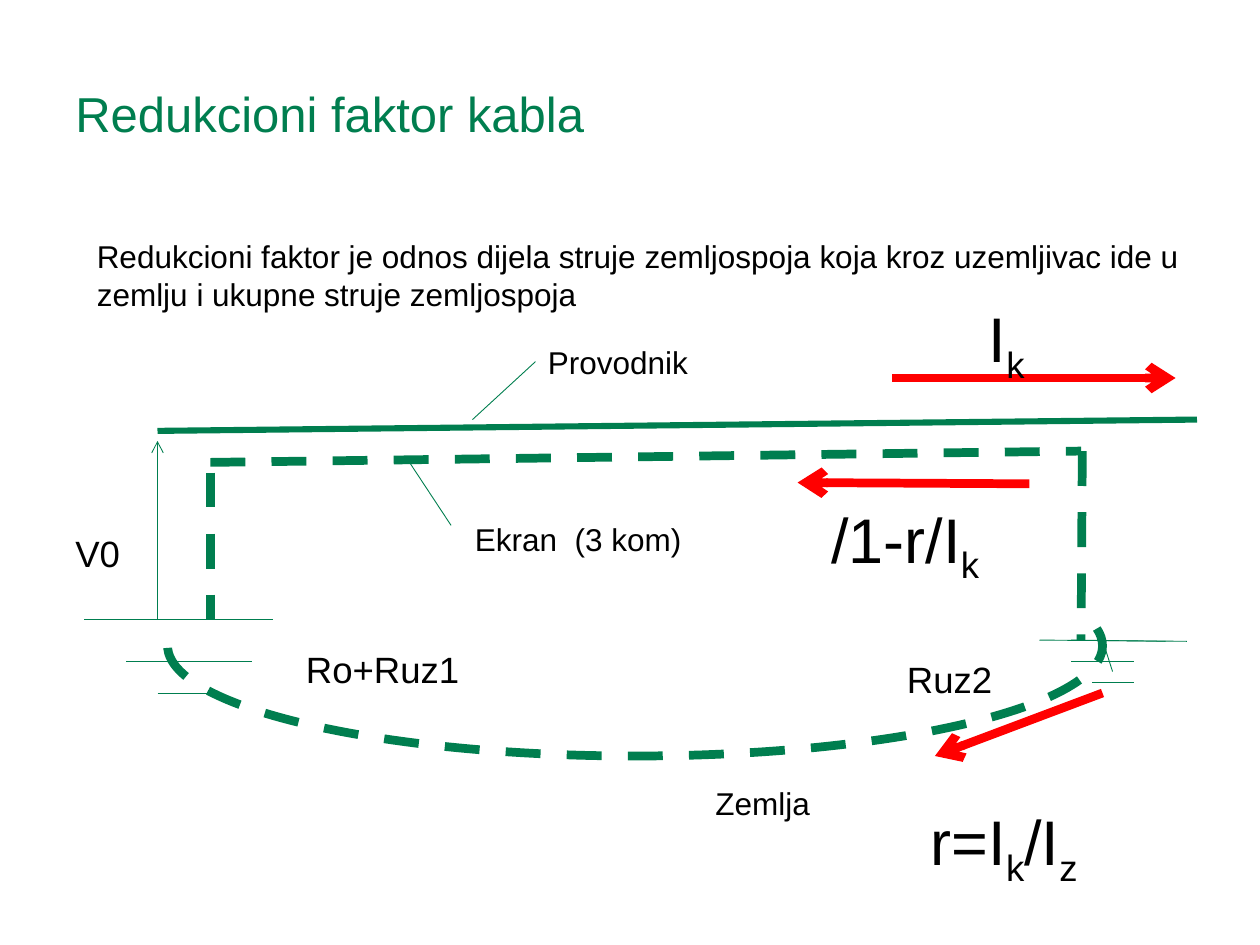
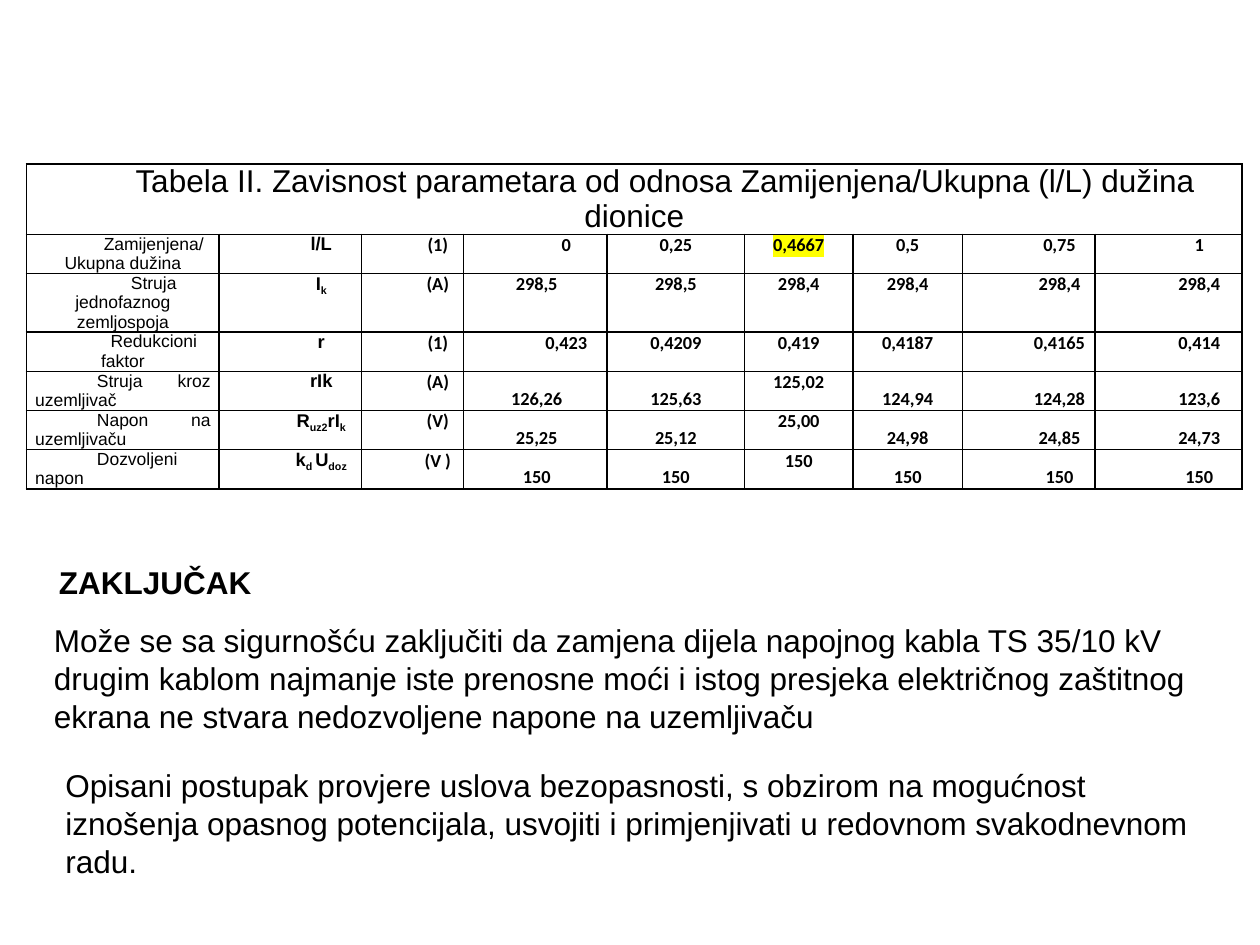
from pptx import Presentation
from pptx.dml.color import RGBColor
from pptx.enum.dml import MSO_LINE
from pptx.enum.shapes import MSO_CONNECTOR, MSO_SHAPE
from pptx.enum.text import MSO_ANCHOR, PP_ALIGN
from pptx.oxml.ns import qn
from pptx.util import Inches, Pt
from lxml import etree

STRAIGHT = MSO_CONNECTOR.STRAIGHT
ARC = MSO_SHAPE.ARC
DASH = MSO_LINE.DASH
TOP, MIDDLE, BOTTOM = MSO_ANCHOR.TOP, MSO_ANCHOR.MIDDLE, MSO_ANCHOR.BOTTOM
CENTER, JUSTIFY = PP_ALIGN.CENTER, PP_ALIGN.JUSTIFY

GREEN, RED, BLACK, YELLOW = "007E4F", "FF0000", "000000", "FFFF00"
THIN, CONDUCTOR, HEAVY = 0.5, 3.5, 5
BODY_SIZE, FORMULA_SIZE = 18, 36

COLUMN_WIDTHS = [1.53, 1.13, 0.81, 1.14, 1.09, 0.86, 0.87, 1.05, 1.17]
COLUMN_INDENTS = [0.49, 0.49, 0.4, 0.02, -0.02, -0.06, 0, 0.49, 0.49]
ROW_HEIGHTS = [0.56, 0.31, 0.46, 0.31, 0.31, 0.31, 0.31]
TABLE_TITLE = ("Tabela II. Zavisnost parametara od odnosa "
               "Zamijenjena/Ukupna (l/L) dužina dionice")
TABLE_ROWS = [
    ["Zamijenjena/Ukupna dužina", "l/L", "(1)",
     "0", "0,25", "0,4667", "0,5", "0,75", "1"],
    ["Struja jednofaznog zemljospoja", "I|k", "(A)",
     "298,5", "298,5", "298,4", "298,4", "298,4", "298,4"],
    ["Redukcioni faktor", "r", "(1)",
     "0,423", "0,4209", "0,419", "0,4187", "0,4165", "0,414"],
    ["Struja kroz uzemljivač", "rIk", "(A)",
     "126,26", "125,63", "125,02", "124,94", "124,28", "123,6"],
    ["Napon na uzemljivaču", "R|uz2|rI|k", "(V)",
     "25,25", "25,12", "25,00", "24,98", "24,85", "24,73"],
    ["Dozvoljeni napon", "k|d |U|doz", "(V )",
     "150", "150", "150", "150", "150", "150"],
]
NAME_COLUMN, SYMBOL_COLUMN, FIRST_VALUE, CHOSEN_VALUE = 0, 1, 3, 5
FIRST_RESULT_ROW = 4


def color(value):
    return RGBColor.from_string(value)


def write(para, text, size, hue=BLACK, bold=False, font="Arial"):
    """Write text in which every second piece between bars is a subscript."""
    for index, piece in enumerate(text.split("|")):
        if not piece:
            continue
        span = para.add_run()
        span.text = piece
        span.font.name = font
        span.font.size = Pt(size)
        span.font.bold = bold
        span.font.color.rgb = color(hue)
        if index % 2:
            span.font._element.set("baseline", "-25000")


def add_text(page, place, text, size=BODY_SIZE, hue=BLACK, bold=False,
             anchor=TOP, wrap=True):
    box = page.shapes.add_textbox(*map(Inches, place))
    frame = box.text_frame
    frame.word_wrap = wrap
    frame.vertical_anchor = anchor
    write(frame.paragraphs[0], text, size, hue, bold)
    return box


def add_title(page, text):
    box = add_text(page, (0.5, 0.3, 9, 1.25), text, 28, GREEN, anchor=MIDDLE)
    box.text_frame.paragraphs[0].line_spacing = 0.9


def style_line(line, hue, width, dashed=False):
    line.color.rgb = color(hue)
    line.width = Pt(width)
    if dashed:
        line.dash_style = DASH


def add_line(page, start, end, hue=GREEN, width=THIN, dashed=False, arrow=False):
    connector = page.shapes.add_connector(
        STRAIGHT, *map(Inches, (*start, *end)))
    style_line(connector.line, hue, width, dashed)
    properties = connector._element.spPr
    if arrow:
        outline = properties.find(qn("a:ln"))
        etree.SubElement(outline, qn("a:tailEnd"), type="arrow")
    etree.SubElement(properties, qn("a:effectLst"))


def add_earth_arc(page):
    arc = page.shapes.add_shape(ARC, *map(Inches, (1.33, 4.25, 7.42, 1.75)))
    arc.rotation = 180
    arc.adjustments[0] = 106.72  # just under 178 degrees, in steps of 5/3
    arc.adjustments[1] = 0
    arc.fill.background()
    arc.shadow.inherit = False
    style_line(arc.line, GREEN, HEAVY, dashed=True)


def frame_cell(cell):
    """Give a cell thin black borders, narrow margins and no fill."""
    properties = cell._tc.get_or_add_tcPr()
    for side in ("lnL", "lnR", "lnT", "lnB"):
        border = etree.SubElement(properties, qn("a:" + side), w=str(Pt(1)))
        fill = etree.SubElement(border, qn("a:solidFill"))
        etree.SubElement(fill, qn("a:srgbClr"), val=BLACK)
    cell.fill.background()
    cell.margin_left = cell.margin_right = Inches(0.07)
    cell.margin_top = cell.margin_bottom = 0


def fill_cell(cell, text, size, indent, bold=False, font="Arial",
              align=CENTER, anchor=TOP):
    cell.vertical_anchor = anchor
    para = cell.text_frame.paragraphs[0]
    para.alignment = align
    properties = para._p.get_or_add_pPr()
    properties.set("marL", "0")
    properties.set("indent", str(Inches(indent)))
    write(para, text, size, bold=bold, font=font)


def highlight(span):
    mark = etree.Element(qn("a:highlight"))
    etree.SubElement(mark, qn("a:srgbClr"), val=YELLOW)
    span.font._element.find(qn("a:latin")).addprevious(mark)


def add_parameter_table(page):
    place = (0.21, 1.3, sum(COLUMN_WIDTHS), sum(ROW_HEIGHTS))
    table = page.shapes.add_table(len(ROW_HEIGHTS), len(COLUMN_WIDTHS),
                                  *map(Inches, place)).table
    table.first_row = table.horz_banding = False
    for column, width in zip(table.columns, COLUMN_WIDTHS):
        column.width = Inches(width)
    for row, height in zip(table.rows, ROW_HEIGHTS):
        row.height = Inches(height)
    for cell in table.iter_cells():
        frame_cell(cell)

    table.cell(0, 0).merge(table.cell(0, len(COLUMN_WIDTHS) - 1))
    fill_cell(table.cell(0, 0), TABLE_TITLE, BODY_SIZE, 0.49)
    for row, texts in enumerate(TABLE_ROWS, 1):
        result = row >= FIRST_RESULT_ROW
        for column, text in enumerate(texts):
            cell = table.cell(row, column)
            indent = COLUMN_INDENTS[column]
            if column == NAME_COLUMN:
                fill_cell(cell, text, 10, indent,
                          align=JUSTIFY if result else CENTER)
                continue
            if column == FIRST_VALUE and row in (1, 3):
                indent = 0.49
            low = result and column >= FIRST_VALUE and column != CHOSEN_VALUE
            fill_cell(cell, text, 10.5, indent, bold=True,
                      font="Arial" if column == SYMBOL_COLUMN else "Calibri",
                      anchor=BOTTOM if low else TOP)
    highlight(table.cell(1, CHOSEN_VALUE).text_frame.paragraphs[0].runs[0])


def build_cable_page(page):
    add_title(page, "Redukcioni faktor kabla")
    add_text(page, (0.67, 1.83, 8.83, 0.71),
             "Redukcioni faktor je odnos dijela struje zemljospoja koja kroz "
             "uzemljivac ide u zemlju i ukupne struje zemljospoja")

    add_line(page, (1.25, 3.42), (9.5, 3.33), width=CONDUCTOR)
    screen = [((1.67, 3.67), (8.58, 3.58)),
              ((1.67, 3.75), (1.67, 4.92)),
              ((8.59, 3.58), (8.58, 5.08))]
    for start, end in screen:
        add_line(page, start, end, width=HEAVY, dashed=True)

    earthing = [((0.67, 4.92), (2.17, 4.92)),
                ((1, 5.25), (2, 5.25)),
                ((1.25, 5.5), (1.75, 5.5)),
                ((8.25, 5.08), (9.42, 5.09)),
                ((8.5, 5.08), (9.25, 5.09)),
                ((8.5, 5.25), (9, 5.25)),
                ((8.67, 5.42), (9, 5.42)),
                ((8.75, 5.08), (8.83, 5.33))]
    leaders = [((3.75, 3.33), (4.25, 2.87)),
               ((3.25, 3.67), (3.58, 4.17))]
    for start, end in earthing + leaders:
        add_line(page, start, end)
    add_earth_arc(page)

    add_line(page, (1.25, 4.92), (1.25, 3.5), arrow=True)
    currents = [((7.08, 3), (9.33, 3)),
                ((8.17, 3.84), (6.33, 3.83)),
                ((8.75, 5.5), (7.42, 6))]
    for start, end in currents:
        add_line(page, start, end, RED, HEAVY, arrow=True)

    formulas = [("I|k", (7.75, 2.33, 1.08, 0.71)),
                ("/1-r/I|k", (6.5, 3.92, 1.83, 0.71)),
                ("r=I|k|/I|z", (7.29, 6.32, 1.82, 0.71)),
                ("|V0", (0.5, 3.83, 0.67, 0.5)),
                ("|Ro+Ruz1", (2.33, 4.75, 1.69, 0.5)),
                ("|Ruz2", (7.1, 4.83, 1.4, 0.5))]
    for text, place in formulas:
        add_text(page, place, text, FORMULA_SIZE)
    labels = [("Provodnik", (4.25, 2.67, 1.5, 0.4)),
              ("Ekran  (3 kom)", (3.67, 4.08, 1.92, 0.4)),
              ("Zemlja", (5.58, 6.17, 1.5, 0.4))]
    for text, place in labels:
        add_text(page, place, text)


def build_conclusion_page(page):
    add_parameter_table(page)
    add_text(page, (0.37, 4.42, 1.74, 0.4), "ZAKLJUČAK", bold=True, wrap=False)
    add_text(page, (0.33, 4.88, 9.47, 1.01),
             "Može se sa sigurnošću zaključiti da zamjena dijela napojnog kabla "
             "TS 35/10 kV drugim kablom najmanje iste prenosne moći i istog "
             "presjeka električnog zaštitnog ekrana ne stvara nedozvoljene "
             "napone na uzemljivaču")
    add_text(page, (0.42, 6.03, 9.11, 1.01),
             "Opisani postupak provjere uslova bezopasnosti, s obzirom na "
             "mogućnost iznošenja opasnog potencijala, usvojiti i "
             "primjenjivati u redovnom svakodnevnom radu.")


def main():
    deck = Presentation()
    deck.slide_width, deck.slide_height = Inches(10), Inches(7.5)
    blank = deck.slide_layouts[6]
    for build in (build_cable_page, build_conclusion_page):
        build(deck.slides.add_slide(blank))
    deck.save("out.pptx")


if __name__ == "__main__":
    main()
